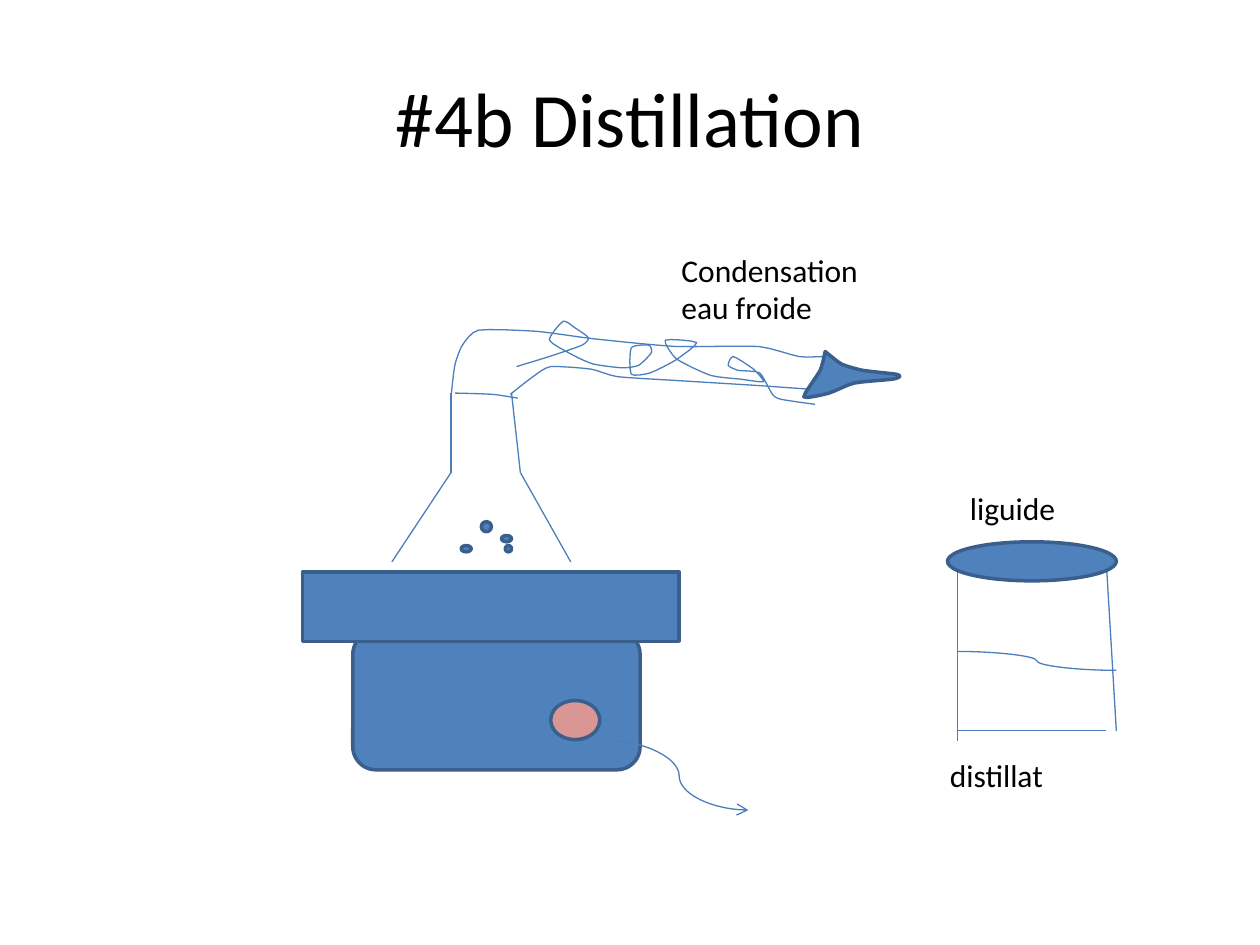
from itertools import pairwise

from lxml import etree
from pptx import Presentation
from pptx.dml.color import RGBColor
from pptx.enum.shapes import MSO_CONNECTOR, MSO_SHAPE
from pptx.enum.text import MSO_ANCHOR, MSO_AUTO_SIZE, PP_ALIGN
from pptx.oxml.ns import qn
from pptx.util import Inches, Pt

BLUE = RGBColor(0x4F, 0x81, 0xBD)
OUTLINE = RGBColor(0x3A, 0x5F, 0x8C)
STROKE = RGBColor(0x4B, 0x7E, 0xBC)
PINK = RGBColor(0xD9, 0x96, 0x94)
BLACK = RGBColor(0, 0, 0)

# Flask outline from foot to lip: height, left wall, right wall.
FLASK_LEVELS = [(4.46, 3.11, 4.53), (3.75, 3.58, 4.13), (3.12, 3.58, 4.06)]
BUBBLES = [(3.66, 4.33, 0.08, 0.05), (3.82, 4.14, 0.08, 0.08),
           (3.98, 4.25, 0.08, 0.05), (4.01, 4.33, 0.05, 0.05)]

# Knots of the hand-drawn strokes; smooth() rounds the course between them.
TUBE = {
    "upper wall": [(3.58, 3.15), (3.61, 2.9), (3.67, 2.74), (3.8, 2.62),
                   (4.26, 2.63), (4.72, 2.69), (5.36, 2.75), (6.02, 2.75),
                   (6.34, 2.83), (6.54, 2.83)],
    "lower wall": [(4.05, 3.13), (4.23, 2.99), (4.37, 2.91), (4.69, 2.93),
                   (4.9, 2.99), (5.36, 3.02), (6.01, 3.06), (6.43, 3.09)],
    "neck rim": [(3.61, 3.12), (3.91, 3.13), (4.11, 3.16)],
}
NOZZLE = {
    "mouth": [(6.55, 2.79), (6.51, 2.94), (6.38, 3.15)],
    "lower edge": [(6.58, 3.12), (6.78, 3.04), (7.08, 3.01)],
    "tip": [(7.14, 2.99), (7.11, 2.97)],
    "upper edge": [(6.85, 2.94), (6.68, 2.89), (6.55, 2.79)],
}
COIL = {
    "inlet": [(4.1, 2.91), (4.36, 2.83), (4.62, 2.74)],
    "first loop": [(4.67, 2.68), (4.56, 2.6), (4.47, 2.55), (4.36, 2.7),
                   (4.55, 2.82), (4.71, 2.89), (4.94, 2.92)],
    "second loop": [(5.07, 2.9), (5.17, 2.8), (5.15, 2.74), (5.01, 2.76),
                    (5.01, 2.97), (5.16, 2.96)],
    "third loop": [(5.36, 2.86), (5.53, 2.72), (5.28, 2.7), (5.37, 2.85),
                   (5.64, 2.98), (5.88, 3.01)],
    "fourth loop": [(6.06, 3.03), (5.98, 2.93), (5.82, 2.83), (5.78, 2.9),
                    (5.86, 2.94), (6.03, 2.96)],
    "outlet": [(6.13, 3.13), (6.2, 3.17), (6.47, 3.21)],
}
LABELS = {
    "distillat": (7.44, 5.95, 1.34, 0.4),
    "liguide": (7.6, 3.83, 1.1, 0.4),
    "Condensation eau froide": (5.31, 1.94, 1.73, 0.71),
}


def smooth(knots, steps=4, tension=0.3):
    """Return points on a cardinal spline that passes through the knots."""
    padded = [knots[0], *knots, knots[-1]]
    points = [knots[0]]
    for before, start, end, after in zip(padded, knots, knots[1:], padded[3:]):
        for step in range(1, steps + 1):
            t = step / steps
            ease = t * t * (3 - 2 * t)
            leave, arrive = t * (1 - t) ** 2, t * t * (t - 1)
            points.append(tuple(
                a + ease * (b - a)
                + tension * (leave * (b - prev) + arrive * (following - a))
                for prev, a, b, following in zip(before, start, end, after)))
    return points


def join_parts(parts):
    return [knot for part in parts.values() for knot in part]


def style_line(line, color, width):
    line.color.rgb = color
    line.width = Pt(width)


def style_solid(sp, fill=BLUE):
    sp.shadow.inherit = False
    sp.fill.solid()
    sp.fill.fore_color.rgb = fill
    style_line(sp.line, OUTLINE, 2)


def add_solid(shapes, kind, box, fill=BLUE):
    style_solid(shapes.add_shape(kind, *map(Inches, box)), fill)


def add_line(shapes, start, end, kind=MSO_CONNECTOR.STRAIGHT, arrow=False):
    line = shapes.add_connector(kind, *map(Inches, (*start, *end)))
    style_line(line.line, STROKE, 0.75)
    sp_pr = line._element.spPr
    if arrow:
        etree.SubElement(sp_pr.find(qn("a:ln")), qn("a:tailEnd"), type="arrow")
    etree.SubElement(sp_pr, qn("a:effectLst"))


def add_sketch(shapes, knots, solid=False):
    """Draw a smooth stroke, or a closed filled outline when solid."""
    start, *rest = [(Inches(x), Inches(y)) for x, y in smooth(knots)]
    builder = shapes.build_freeform(*start, scale=1.0)
    builder.add_line_segments(rest, close=solid)
    sp = builder.convert_to_shape()
    if solid:
        style_solid(sp)
    else:
        sp.shadow.inherit = False
        sp.fill.background()
        style_line(sp.line, STROKE, 0.75)


def write_text(p, text, size):
    r = p.add_run()
    r.text = text
    for name, value in {"name": "Calibri", "size": Pt(size)}.items():
        setattr(r.font, name, value)
    r.font.color.rgb = BLACK


def add_label(shapes, text, box):
    tf = shapes.add_textbox(*map(Inches, box)).text_frame
    tf.word_wrap = True
    tf.auto_size = MSO_AUTO_SIZE.SHAPE_TO_FIT_TEXT
    write_text(tf.paragraphs[0], text, 18)


def set_title(title, text):
    place = {"left": 0.5, "top": 0.3, "width": 9, "height": 1.25}
    for name, value in place.items():
        setattr(title, name, Inches(value))
    tf = title.text_frame
    tf.vertical_anchor = MSO_ANCHOR.MIDDLE
    p = tf.paragraphs[0]
    p.alignment = PP_ALIGN.CENTER
    write_text(p, text, 44)


def draw_heater(shapes):
    add_solid(shapes, MSO_SHAPE.ROUNDED_RECTANGLE, (2.8, 5.01, 2.28, 1.1))
    add_solid(shapes, MSO_SHAPE.RECTANGLE, (2.4, 4.54, 2.99, 0.55))


def draw_flask(shapes):
    for (y1, left1, right1), (y2, left2, right2) in pairwise(FLASK_LEVELS):
        add_line(shapes, (left1, y1), (left2, y2))
        add_line(shapes, (right1, y1), (right2, y2))


def draw_tube(shapes):
    for knots in TUBE.values():
        add_sketch(shapes, knots)
    add_sketch(shapes, join_parts(NOZZLE), solid=True)


def draw_beaker(shapes):
    left, right, flare = 7.6, 8.78, 8.86
    top, bottom = 4.46, 5.8
    add_line(shapes, (left, top), (left, bottom + 0.08))
    add_line(shapes, (left, bottom), (right, bottom))
    add_line(shapes, (flare, bottom), (right, top))
    add_solid(shapes, MSO_SHAPE.OVAL, (7.52, 4.3, 1.34, 0.31))
    add_line(shapes, (left, 5.17), (flare, 5.32), MSO_CONNECTOR.CURVE)


def draw_knob_and_cord(shapes):
    add_solid(shapes, MSO_SHAPE.OVAL, (4.37, 5.56, 0.39, 0.31), PINK)
    add_line(shapes, (4.84, 5.88), (5.94, 6.43), MSO_CONNECTOR.CURVE, arrow=True)


def main():
    prs = Presentation()
    prs.slide_width, prs.slide_height = Inches(10), Inches(7.5)
    shapes = prs.slides.add_slide(prs.slide_layouts[5]).shapes
    set_title(shapes.title, "#4b Distillation")
    for draw in (draw_heater, draw_flask, draw_tube, draw_beaker,
                 draw_knob_and_cord):
        draw(shapes)
    add_sketch(shapes, join_parts(COIL))
    for text, box in LABELS.items():
        add_label(shapes, text, box)
    for box in BUBBLES:
        add_solid(shapes, MSO_SHAPE.OVAL, box)
    prs.save("out.pptx")


if __name__ == "__main__":
    main()
